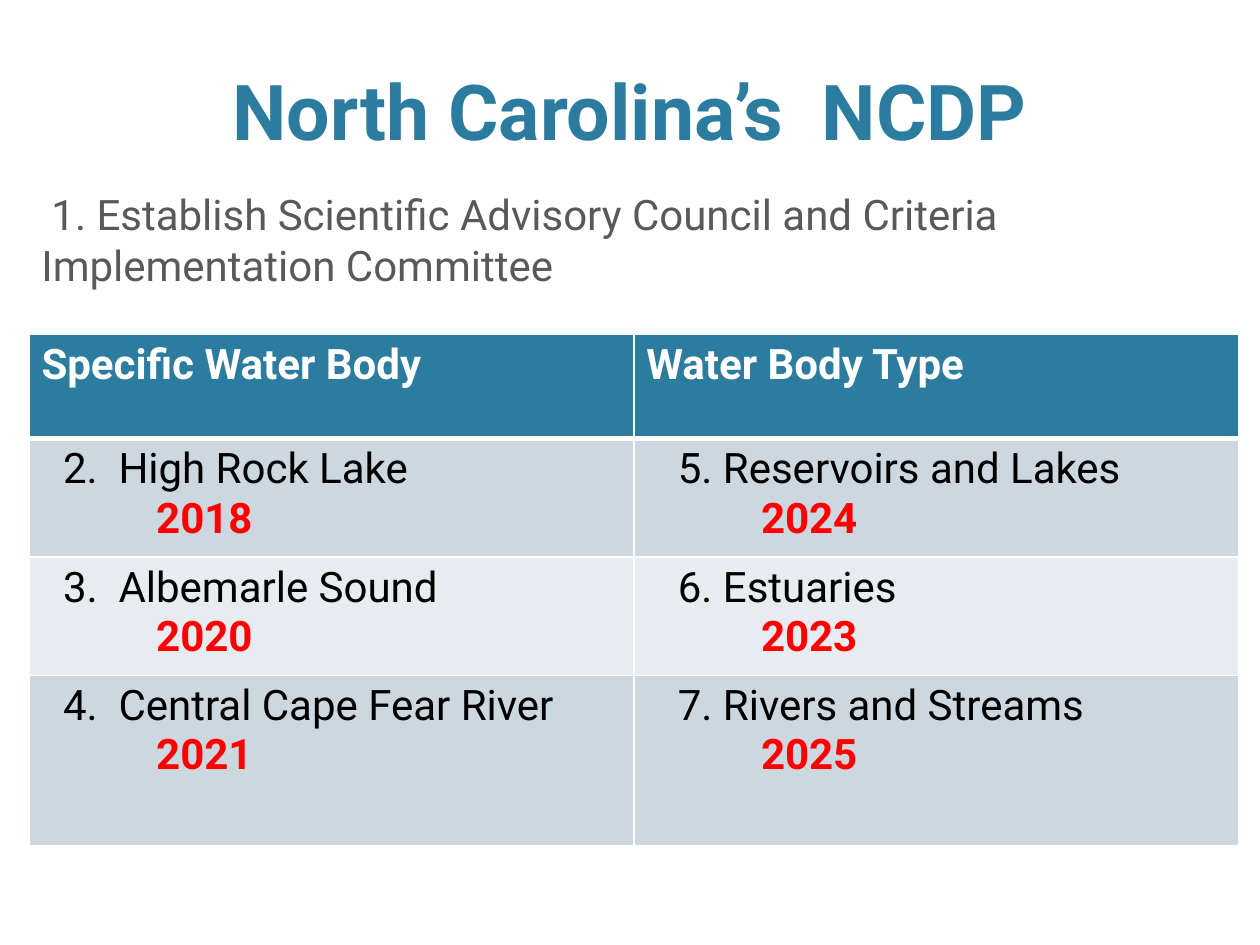
from dataclasses import dataclass

from lxml.etree import SubElement
from pptx import Presentation
from pptx.dml.color import RGBColor as RGB
from pptx.enum.text import MSO_ANCHOR as Anchor, PP_ALIGN as Align
from pptx.oxml.ns import qn
from pptx.util import Inches, Pt


@dataclass(frozen=True)
class Theme:
    font: str = "Roboto"
    title_size: int = 44
    body_size: int = 24
    teal: str = "2C7C9F"
    gray: str = "595959"
    black: str = "000000"
    white: str = "FFFFFF"
    red: str = "FF0000"
    bands: tuple = ("CDD7DF", "E8ECF0")


THEME = Theme()
HEADINGS = ("Specific Water Body", "Water Body Type")
MILESTONES = (
    (("2.  High Rock Lake", "2018"), ("5. Reservoirs and Lakes", "2024")),
    (("3.  Albemarle Sound", "2020"), ("6. Estuaries", "2023")),
    (("4.  Central Cape Fear River", "2021"), ("7. Rivers and Streams", "2025")),
)
ROW_HEIGHTS = (0.83, 0.94, 0.94, 1.35)
COLUMN_WIDTH = 4.8
ITEM_INDENTS = (0.17, 0.25)
YEAR_INDENT = 0.91


def write(paragraph, text, color, size=THEME.body_size, bold=False):
    paragraph.text = text
    font = paragraph.font
    font.name, font.size, font.bold = THEME.font, Pt(size), bold
    font.color.rgb = RGB.from_string(color)


def indent(paragraph, left=0, first_line=0):
    properties = paragraph._p.get_or_add_pPr()
    properties.set("marL", str(Inches(left)))
    properties.set("indent", str(Inches(first_line)))


def add_text_box(slide, left, top, width, height, anchor):
    """Return the first paragraph of a new wrapping text box."""
    box = slide.shapes.add_textbox(
        Inches(left), Inches(top), Inches(width), Inches(height))
    frame = box.text_frame
    frame.word_wrap = True
    frame.vertical_anchor = anchor
    return frame.paragraphs[0]


def style_cell(cell, fill, top=1, bottom=1):
    """Fill the cell and give it white borders, with widths in points."""
    properties = cell._tc.get_or_add_tcPr()
    for side, width in (("L", 1), ("R", 1), ("T", top), ("B", bottom)):
        line = SubElement(properties, qn(f"a:ln{side}"), w=str(Pt(width)))
        solid = SubElement(line, qn("a:solidFill"))
        SubElement(solid, qn("a:srgbClr"), val=THEME.white)
    cell.fill.solid()
    cell.fill.fore_color.rgb = RGB.from_string(fill)


def fill_milestone(cell, item, year, item_indent):
    item_line = cell.text_frame.paragraphs[0]
    write(item_line, item, THEME.black)
    indent(item_line, item_indent)
    year_line = cell.text_frame.add_paragraph()
    write(year_line, year, THEME.red, bold=True)
    indent(year_line, YEAR_INDENT)


def add_schedule(slide, left, top):
    table = slide.shapes.add_table(
        len(ROW_HEIGHTS), len(HEADINGS), Inches(left), Inches(top),
        Inches(COLUMN_WIDTH * len(HEADINGS)), Inches(sum(ROW_HEIGHTS))).table
    for row, height in zip(table.rows, ROW_HEIGHTS):
        row.height = Inches(height)

    for column, heading in enumerate(HEADINGS):
        table.columns[column].width = Inches(COLUMN_WIDTH)
        cell = table.cell(0, column)
        write(cell.text_frame.paragraphs[0], heading, THEME.white, bold=True)
        style_cell(cell, THEME.teal, bottom=3)

    for row, milestones in enumerate(MILESTONES, start=1):
        band = THEME.bands[(row - 1) % len(THEME.bands)]
        for column, (item, year) in enumerate(milestones):
            cell = table.cell(row, column)
            fill_milestone(cell, item, year, ITEM_INDENTS[column])
            style_cell(cell, band, top=3 if row == 1 else 1)


def main():
    deck = Presentation()
    deck.slide_width, deck.slide_height = Inches(10), Inches(7.5)
    slide = deck.slides.add_slide(deck.slide_layouts[6])

    title = add_text_box(slide, 0.6, 0.31, 8.8, 0.98, Anchor.BOTTOM)
    write(title, "North Carolina’s  NCDP", THEME.teal, THEME.title_size, bold=True)
    title.alignment = Align.CENTER

    first_step = add_text_box(slide, 0.23, 1.45, 9.59, 1, Anchor.TOP)
    write(first_step, "1. Establish Scientific Advisory Council and Criteria "
          "Implementation Committee", THEME.gray)
    indent(first_step, first_line=0.08)

    add_schedule(slide, 0.23, 2.65)
    deck.save("out.pptx")


if __name__ == "__main__":
    main()
